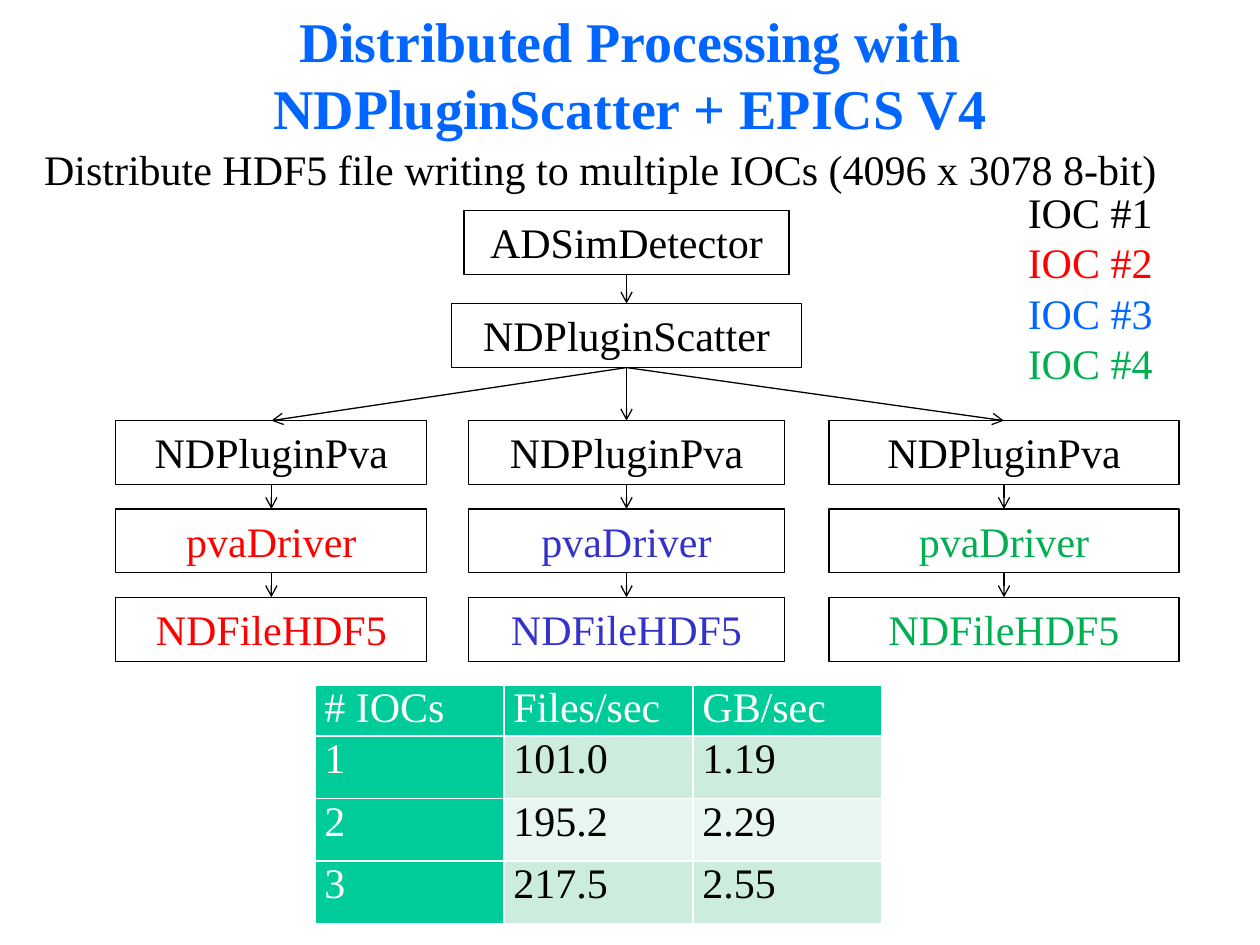
import pptx
import pptx.util
import pptx.dml.color
import pptx.enum.shapes
import pptx.enum.text
import pptx.oxml
import pptx.oxml.ns

Cm, Pt = pptx.util.Cm, pptx.util.Pt
RGB = pptx.dml.color.RGBColor
ALIGN = pptx.enum.text.PP_ALIGN
ANCHOR = pptx.enum.text.MSO_ANCHOR
SIZING = pptx.enum.text.MSO_AUTO_SIZE

BLACK = RGB(0, 0, 0)
WHITE = RGB(0xFF, 0xFF, 0xFF)
RED = RGB(0xFF, 0, 0)
BLUE = RGB(0, 0x66, 0xFF)
NAVY = RGB(0x33, 0x33, 0xCC)
GREEN = RGB(0, 0xB0, 0x50)
TEAL = RGB(0, 0xCC, 0x99)
MINT = RGB(0xCC, 0xEC, 0xDE)
PALE = RGB(0xE7, 0xF6, 0xEF)

FONT = "Times New Roman"
BOX_H = 1.29
STEP = 1.78  # from one row of boxes to the next
MID = 12.63  # centre of the middle column


def write(para, text, size=24, color=BLACK, bold=False, align=ALIGN.LEFT,
          line=None, before=0):
    para.alignment = align
    para.space_before = Pt(before)
    if line:
        para.line_spacing = line
    run = para.add_run()
    run.text = text
    font = run.font
    font.name, font.size, font.bold = FONT, Pt(size), bold
    font.color.rgb = color


def add_title(slide, text):
    title = slide.shapes.title
    title.left, title.top = Cm(2.33), Cm(0.42)
    title.width, title.height = Cm(20.75), Cm(2.12)
    frame = title.text_frame
    frame.auto_size = SIZING.NONE
    frame.vertical_anchor = ANCHOR.MIDDLE
    write(frame.paragraphs[0], text, size=32, color=BLUE, bold=True,
          align=ALIGN.CENTER)


def add_text(slide, left, top, width, height, lines, **form):
    area = slide.shapes.add_textbox(Cm(left), Cm(top), Cm(width), Cm(height))
    frame = area.text_frame
    frame.word_wrap = True
    for i, (text, color) in enumerate(lines):
        para = frame.add_paragraph() if i else frame.paragraphs[0]
        write(para, text, color=color, **form)


def add_box(slide, mid, top, width, text, color=BLACK):
    box = slide.shapes.add_shape(
        pptx.enum.shapes.MSO_SHAPE.RECTANGLE,
        Cm(mid - width / 2), Cm(top), Cm(width), Cm(BOX_H))
    box.shadow.inherit = False
    box.fill.background()
    box.line.color.rgb = BLACK
    box.line.width = Pt(0.75)
    frame = box.text_frame
    frame.word_wrap = True
    frame.vertical_anchor = ANCHOR.TOP
    write(frame.paragraphs[0], text, color=color, align=ALIGN.CENTER)
    return box


def add_arrow(slide, start, end):
    # From the bottom of one box to the top of the next
    arrow = slide.shapes.add_connector(
        pptx.enum.shapes.MSO_CONNECTOR.STRAIGHT, 0, 0, 0, 0)
    arrow.begin_connect(start, 2)
    arrow.end_connect(end, 0)
    arrow.line.color.rgb = BLACK
    arrow.line.width = Pt(0.75)
    tag = pptx.oxml.ns.qn
    tail = arrow.line._get_or_add_ln().makeelement(
        tag("a:tailEnd"), {"type": "arrow"})
    arrow.line._get_or_add_ln().append(tail)
    props = arrow._element.spPr
    props.append(props.makeelement(tag("a:effectLst"), {}))


def add_grid(slide, rows):
    # The default table style supplies the white cell borders
    grid = slide.shapes.add_table(
        len(rows), len(rows[0]), Cm(6.35), Cm(13.82), Cm(11.43), Cm(4.8)).table
    grid.first_col = True
    for r, row in enumerate(rows):
        grid.rows[r].height = Cm(1.26 if r else 1.02)
        for c, text in enumerate(row):
            cell = grid.cell(r, c)
            head = r == 0 or c == 0
            cell.margin_left = cell.margin_right = Cm(0.19)
            cell.margin_top = cell.margin_bottom = 0
            cell.fill.solid()
            cell.fill.fore_color.rgb = TEAL if head else MINT if r % 2 else PALE
            write(cell.text_frame.paragraphs[0], text,
                  color=WHITE if head else BLACK, align=ALIGN.JUSTIFY)


def main():
    deck = pptx.Presentation()
    deck.slide_width, deck.slide_height = Cm(25.4), Cm(19.05)
    slide = deck.slides.add_slide(deck.slide_layouts[5])

    # Headings
    add_title(slide, "Distributed Processing with NDPluginScatter + EPICS V4")
    add_text(slide, 0.64, 2.96, 23.92, 1.27,
             [("Distribute HDF5 file writing to multiple IOCs "
               "(4096 x 3078 8-bit)", BLACK)], line=0.8, before=4.8)

    # Source and scatter stage
    source = add_box(slide, MID, 4.24, 6.55, "ADSimDetector")
    hub = add_box(slide, MID, 6.12, 7.06, "NDPluginScatter")
    add_arrow(slide, source, hub)

    # One chain of boxes for each receiving IOC
    for mid, width, color in [(5.47, 6.27, RED), (MID, 6.36, NAVY),
                              (20.24, 7.06, GREEN)]:
        last = hub
        for i, (text, shade) in enumerate([("NDPluginPva", BLACK),
                                           ("pvaDriver", color),
                                           ("NDFileHDF5", color)]):
            box = add_box(slide, mid, 8.48 + i * STEP, width, text, shade)
            add_arrow(slide, last, box)
            last = box

    # Colour key
    key = enumerate([BLACK, RED, BLUE, GREEN], 1)
    add_text(slide, 20.47, 3.63, 3.38, 4.37,
             [(f"IOC #{n}", color) for n, color in key])

    # Measured rates
    add_grid(slide, [("# IOCs", "Files/sec", "GB/sec"),
                     ("1", "101.0", "1.19"),
                     ("2", "195.2", "2.29"),
                     ("3", "217.5", "2.55")])
    deck.save("out.pptx")


if __name__ == "__main__":
    main()
